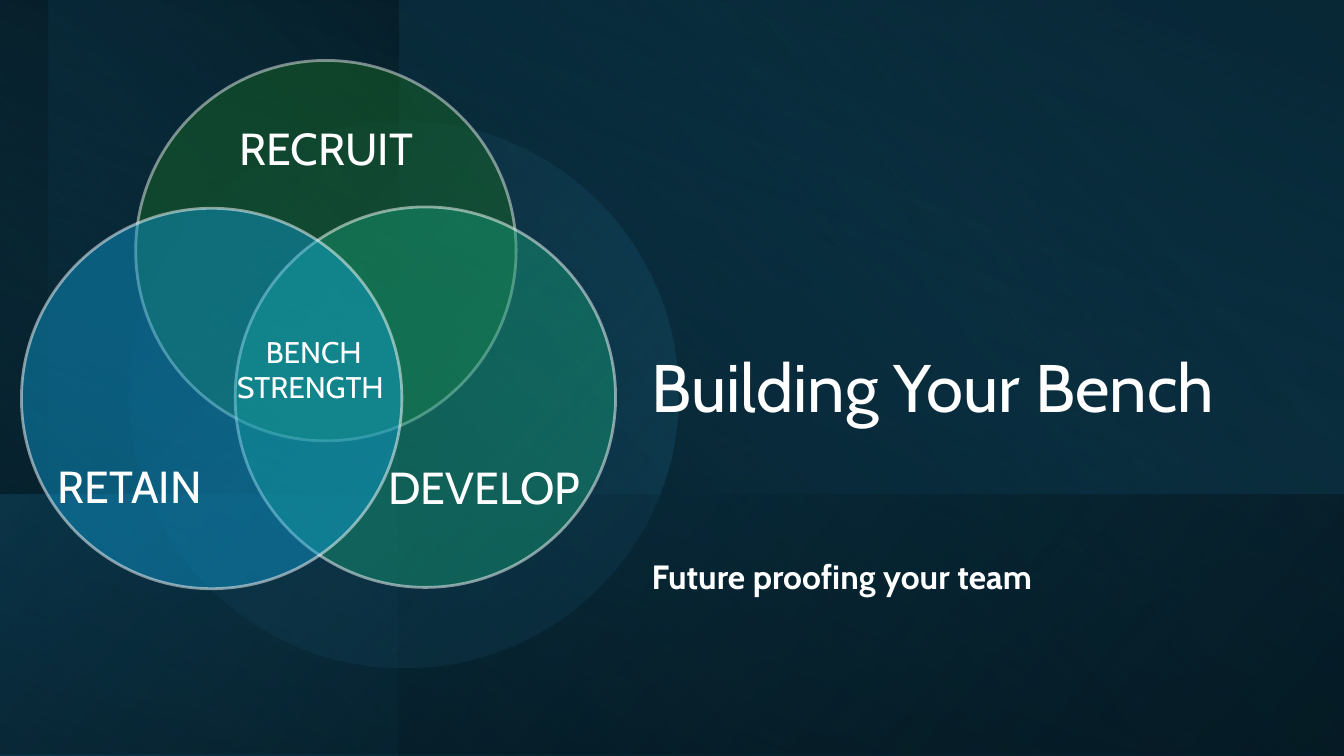
from pptx import Presentation
from pptx.dml.color import RGBColor
from pptx.enum.shapes import MSO_SHAPE as SHAPE
from pptx.enum.text import MSO_ANCHOR as ANCHOR, PP_ALIGN as ALIGN
from pptx.oxml.ns import qn
from pptx.util import Pt
from lxml import etree

FONT = "Cabin"
WHITE = "FFFFFF"
W, H = 720, 405
DIAMETER = 203.8

# Gradient panels: shape, box, rotation, flipped, angle, stops (position, colour, opacity)
PANELS = [
    (SHAPE.RECTANGLE, (-0.7, 0, 722, H), 180, False, 70,
     [(0, "000000", 100), (100, "104862", 100)]),
    (SHAPE.RECTANGLE, (26, 0, 695.5, H), 180, True, 140,
     [(21, "0B3041", 83), (100, "156082", 0)]),
    (SHAPE.RECTANGLE, (-0.7, 0, 214, H), 180, False, 220,
     [(0, "104862", 0), (99, "000000", 41)]),
    (SHAPE.RECTANGLE, (-0.7, 0, 722, H), 0, True, 290,
     [(3, "104862", 0), (100, "000000", 73)]),
    (SHAPE.RECTANGLE, (265, -51.2, H, 507.6), 90, True, 230,
     [(3, "104862", 0), (100, "000000", 27)]),
    (SHAPE.OVAL, (69.8, 64, 293, 294.5), 99.9, False, 240,
     [(0, "156082", 26), (85, "46B1E1", 0)]),
    (SHAPE.RECTANGLE, (0, 265, 721.5, 140.4), 0, True, 220,
     [(0, "104862", 50), (99, "000000", 34)]),
]

# Venn circles: left, top, fill, outline opacity
CIRCLES = [
    (72.7, 32.4, "196B24", 45),
    (126, 110.9, "179D76", 50),
    (11.5, 111.6, "0F9ED5", 50),
]

# Texts: box, inset (x, y), anchor, alignment, line spacing, runs (text, format)
TEXTS = [
    ((342, 48.2, 378, 188), (7.2, 7.2), ANCHOR.BOTTOM, ALIGN.LEFT, 0.9,
     [("Building Your Bench", {"size": Pt(36)})]),
    ((342, 293, 404, 63.4), (7.2, 7.2), ANCHOR.TOP, ALIGN.LEFT, 0.9,
     [("Future proofing your team", {"size": Pt(18), "bold": True})]),
    ((100, 67.7, 149.8, 91.4), (0, 0), ANCHOR.TOP, ALIGN.CENTER, 0.9,
     [("RECRUIT", {"size": Pt(24)})]),
    ((188.6, 163.4, 122.4, 112.3), (0, 0), ANCHOR.BOTTOM, ALIGN.RIGHT, 0.9,
     [("DEVELOP", {"size": Pt(24)})]),
    ((31, 164.2, 122.4, 112.3), (0, 0), ANCHOR.BOTTOM, ALIGN.LEFT, 0.9,
     [("RETAIN", {"size": Pt(24)}), (" ", {"size": Pt(32)})]),
    ((119.5, 175, 97.2, 46), (7.2, 3.6), ANCHOR.TOP, ALIGN.CENTER, 1.0,
     [("BENCH STRENGTH ", {"size": Pt(16)})]),
]


def rgb(value):
    return RGBColor.from_string(value)


def set_opacity(parent, percent):
    """Add an opacity to the colour found inside a fill, line or stop."""
    color = next(parent.iter(qn("a:srgbClr")))
    etree.SubElement(color, qn("a:alpha"), val=str(percent * 1000))


def add_shape(kind, box):
    s = slide.shapes.add_shape(kind, *map(Pt, box))
    s.shadow.inherit = False
    return s


def add_panel(kind, box, rotation, flipped, angle, stops):
    s = add_shape(kind, box)
    s.line.fill.background()
    s.rotation = rotation
    if flipped:
        s._element.spPr.xfrm.set("flipH", "1")
    s.fill.gradient()
    s.fill.gradient_angle = angle
    for stop, (position, color, opacity) in zip(s.fill.gradient_stops, stops):
        stop.position = position / 100
        stop.color.rgb = rgb(color)
    nodes = s._element.spPr.iter(qn("a:gs"))
    for node, (_, _, opacity) in zip(nodes, stops):
        if opacity < 100:
            set_opacity(node, opacity)


def add_circle(left, top, color, line_opacity):
    s = add_shape(SHAPE.OVAL, (left, top, DIAMETER, DIAMETER))
    s.fill.solid()
    s.fill.fore_color.rgb = rgb(color)
    s.line.color.rgb = rgb(WHITE)
    s.line.width = Pt(1.5)
    sp_pr = s._element.spPr
    set_opacity(sp_pr.find(qn("a:solidFill")), 45)
    set_opacity(sp_pr.find(qn("a:ln")), line_opacity)


def add_text(box, inset, anchor, align, spacing, runs):
    tf = slide.shapes.add_textbox(*map(Pt, box)).text_frame
    x, y = map(Pt, inset)
    frame = {"word_wrap": True, "vertical_anchor": anchor, "margin_left": x,
             "margin_right": x, "margin_top": y, "margin_bottom": y}
    for name, value in frame.items():
        setattr(tf, name, value)
    p = tf.paragraphs[0]
    p.alignment = align
    p.line_spacing = spacing
    for text, style in runs:
        r = p.add_run()
        r.text = text
        r.font.color.rgb = rgb(WHITE)
        for name, value in {"name": FONT, **style}.items():
            setattr(r.font, name, value)


prs = Presentation()
prs.slide_width, prs.slide_height = Pt(W), Pt(H)
slide = prs.slides.add_slide(prs.slide_layouts[6])

# Background
for panel in PANELS:
    add_panel(*panel)

# Venn diagram
for circle in CIRCLES:
    add_circle(*circle)

# Title, subtitle and labels
for text in TEXTS:
    add_text(*text)

prs.save("out.pptx")
